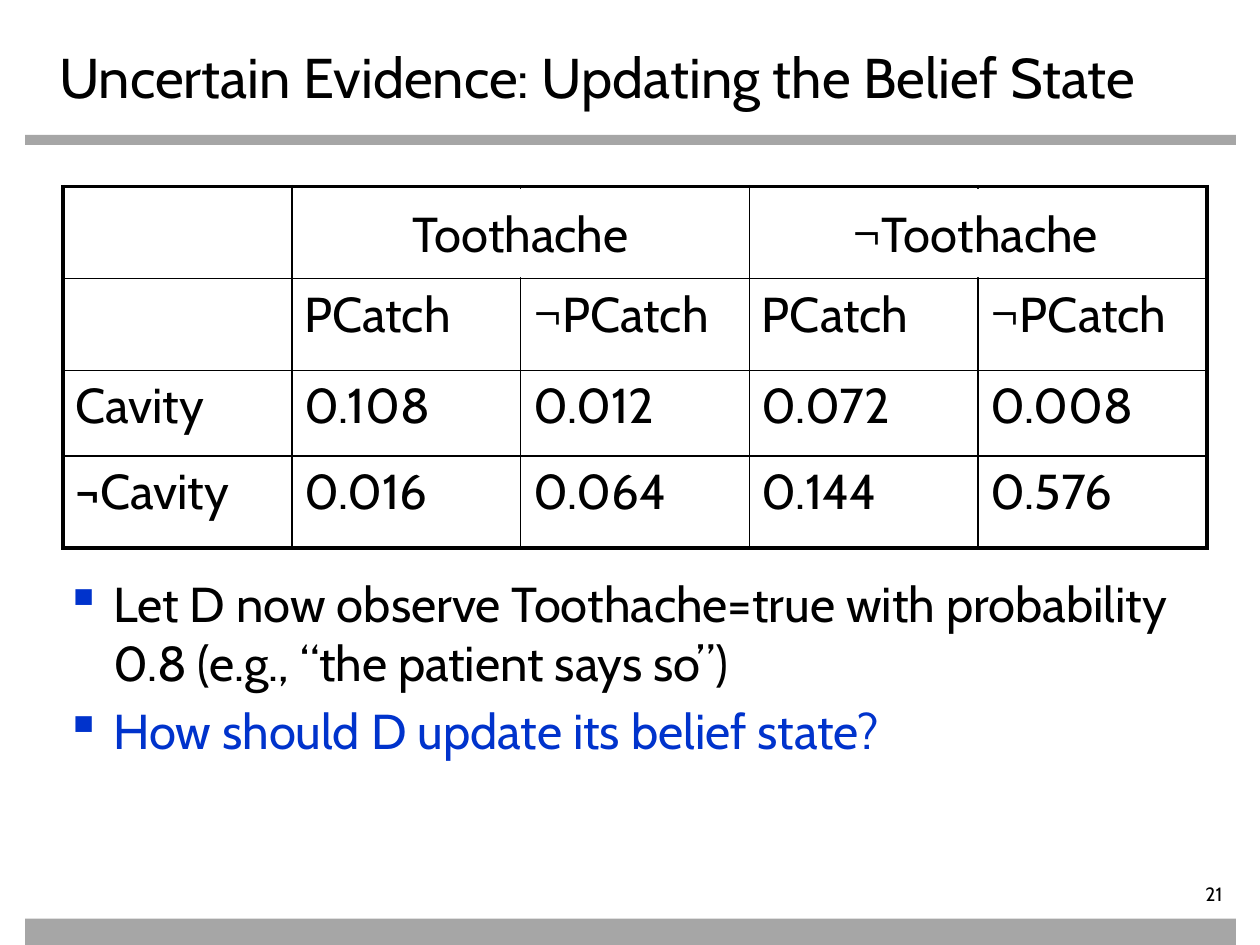
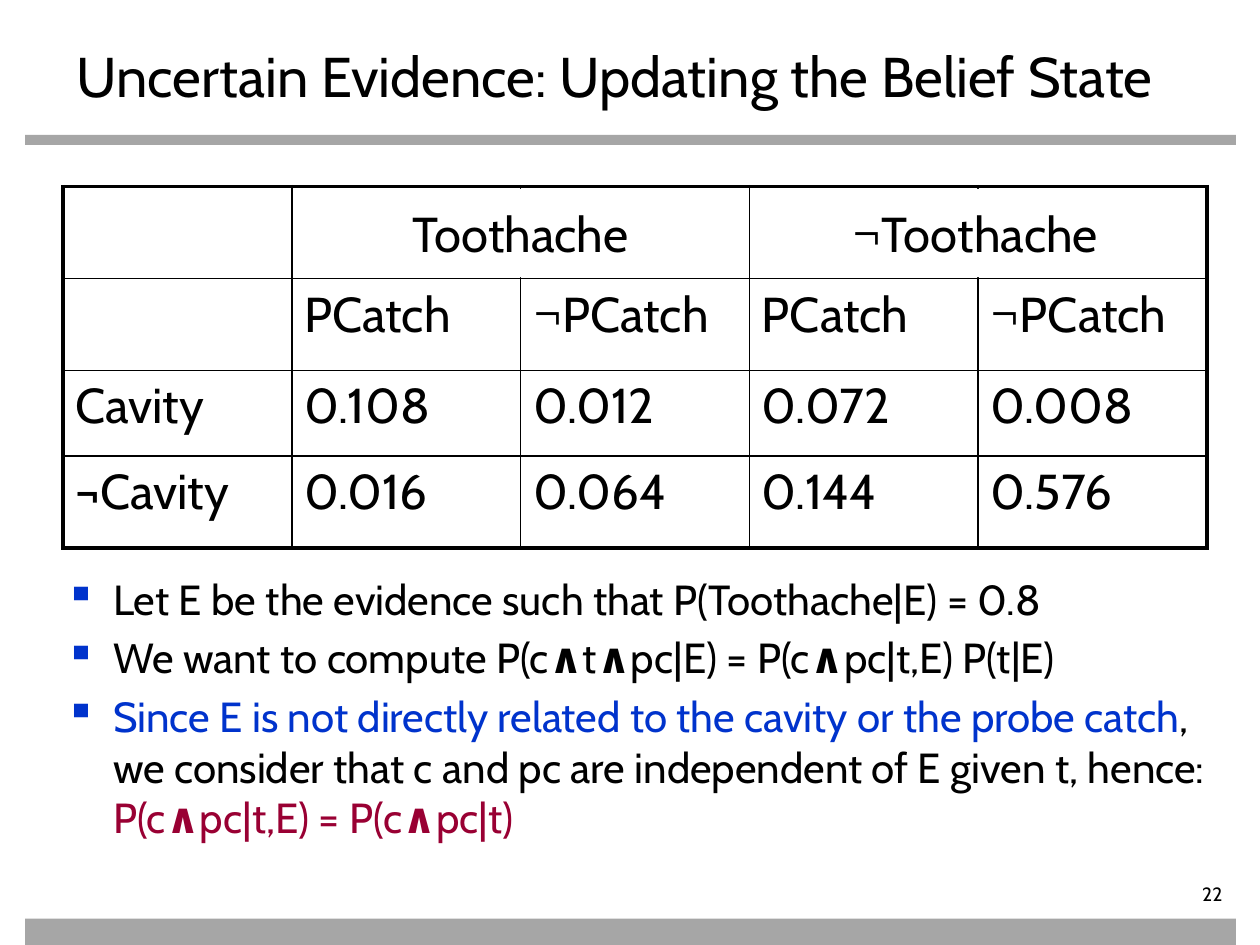
from itertools import groupby
from typing import NamedTuple

from lxml.etree import SubElement
from pptx import Presentation
from pptx.dml.color import RGBColor
from pptx.enum.shapes import MSO_SHAPE as Preset
from pptx.enum.text import MSO_ANCHOR as Anchor, MSO_AUTO_SIZE as AutoSize, PP_ALIGN as Align
from pptx.oxml.ns import qn
from pptx.util import Inches, Pt

# Shared style
FONT = "Cabin"
COLORS = {"ink": "000000", "paper": "FFFFFF", "band": "A6A6A6",
          "accent": "0033CC", "formula": "990033"}
TITLE = "Uncertain Evidence: Updating the Belief State"
TITLE_SIZE, TABLE_SIZE, NUMBER_SIZE, SMALL_NOT_SIZE = 32, 28, 11, 24
OUTER_LINE, INNER_LINE = 2.25, 1
BULLET_INDENT = Inches(0.38)


class Area(NamedTuple):
    left: float
    top: float
    width: float
    height: float

    def lengths(self) -> list:
        return [Inches(value) for value in self]


class Span(NamedTuple):
    text: str
    color: str = "ink"
    bold: bool = False
    size: float | None = None


class Header(NamedTuple):
    text: str
    area: Area


class BeliefPage(NamedTuple):
    number: int
    title_area: Area
    text_area: Area
    text_size: float
    bullets: list


def with_wedges(text: str, color: str = "ink") -> list[Span]:
    """Split a formula so that every ∧ is bold."""
    return [Span("".join(chars), color, is_wedge)
            for is_wedge, chars in groupby(text, lambda char: char == "∧")]


# Content
BANDS = [Area(0.2, 1.07, 9.61, 0.08), Area(0.2, 7.29, 9.61, 0.21)]
NUMBER_AREA = Area(8.7, 7, 1.1, 0.22)
TABLE_AREA = Area(0.5, 1.48, 9.08, 2.87)
ROW_HEIGHTS = [0.73, 0.73, 0.68, 0.73]
HEADERS = [Header("Toothache", Area(2.42, 1.5, 3.42, 0.7)),
           Header("¬Toothache", Area(6.02, 1.5, 3.44, 0.7))]
PROBABILITIES = [
    ["", "", "", "", ""],
    ["", "PCatch", "¬PCatch", "PCatch", "¬PCatch"],
    ["Cavity", "0.108", "0.012", "0.072", "0.008"],
    [[Span("¬", bold=True, size=SMALL_NOT_SIZE), Span("Cavity")],
     "0.016", "0.064", "0.144", "0.576"],
]
PAGES = [
    BeliefPage(21, Area(0.37, 0.29, 9.44, 0.54), Area(0.42, 4.5, 9.25, 1.75), 28, [
        [Span("Let D now observe Toothache=true with probability 0.8 "
              "(e.g., “the patient says so”)")],
        [Span("How should D update its belief state?", "accent")],
    ]),
    BeliefPage(22, Area(0.51, 0.28, 9, 0.55), Area(0.42, 4.5, 9.25, 2.67), 24, [
        [Span("Let E be the evidence such that P(Toothache|E) = 0.8")],
        with_wedges("We want to compute P(c∧t∧pc|E) = P(c∧pc|t,E) P(t|E)"),
        [Span("Since E is not directly related to the cavity or the probe catch", "accent"),
         Span(", we consider that c and pc are independent of E given t, hence: "),
         *with_wedges("P(c∧pc|t,E) = P(c∧pc|t)", "formula")],
    ]),
]


def rgb(color: str) -> RGBColor:
    return RGBColor.from_string(COLORS[color])


def write(para, content: str | list[Span], size: float, align=Align.LEFT) -> None:
    spans = [Span(content)] if isinstance(content, str) else content
    para.alignment = align
    para.font.name = FONT
    para.font.size = Pt(size)
    same_color = len({span.color for span in spans}) == 1
    if same_color:
        para.font.color.rgb = rgb(spans[0].color)
    mixed_bold = any(span.bold for span in spans)
    for span in spans:
        run = para.add_run()
        run.text = span.text
        if not same_color:
            run.font.color.rgb = rgb(span.color)
        if mixed_bold:
            run.font.bold = span.bold
        if span.size:
            run.font.size = Pt(span.size)


def add_block(page, area: Area, color: str):
    block = page.shapes.add_shape(Preset.RECTANGLE, *area.lengths())
    block.shadow.inherit = False
    block.fill.solid()
    block.fill.fore_color.rgb = rgb(color)
    block.line.fill.background()
    return block


def add_title(page, area: Area) -> None:
    title = page.shapes.title
    title.left, title.top, title.width, title.height = area.lengths()
    frame = title.text_frame
    frame.auto_size = AutoSize.NONE
    frame.vertical_anchor = Anchor.TOP
    write(frame.paragraphs[0], TITLE, TITLE_SIZE)


def add_number(page, number: int) -> None:
    frame = page.shapes.add_textbox(*NUMBER_AREA.lengths()).text_frame
    frame.word_wrap = True
    frame.margin_left = frame.margin_top = frame.margin_bottom = 0
    write(frame.paragraphs[0], str(number), NUMBER_SIZE, Align.RIGHT)


def set_borders(cell, widths: dict[str, float]) -> None:
    properties = cell._tc.get_or_add_tcPr()
    for side, width in widths.items():
        line = SubElement(properties, qn(f"a:ln{side}"), w=str(Pt(width)))
        fill = SubElement(line, qn("a:solidFill"))
        SubElement(fill, qn("a:srgbClr"), val=COLORS["ink"])


def add_probability_table(page) -> None:
    rows, columns = len(PROBABILITIES), len(PROBABILITIES[0])
    table = page.shapes.add_table(rows, columns, *TABLE_AREA.lengths()).table
    table.first_row = table.horz_banding = False
    for row, height in zip(table.rows, ROW_HEIGHTS):
        row.height = Inches(height)
    for r, contents in enumerate(PROBABILITIES):
        for c, content in enumerate(contents):
            cell = table.cell(r, c)
            at_edge = {"L": c == 0, "R": c == columns - 1,
                       "T": r == 0, "B": r == rows - 1}
            set_borders(cell, {side: OUTER_LINE if outer else INNER_LINE
                               for side, outer in at_edge.items()})
            cell.fill.background()
            if content:
                write(cell.text_frame.paragraphs[0], content, TABLE_SIZE)
    # Headers spanning two columns each
    for header in HEADERS:
        frame = add_block(page, header.area, "paper").text_frame
        frame.word_wrap = False
        frame.vertical_anchor = Anchor.MIDDLE
        write(frame.paragraphs[0], header.text, TABLE_SIZE, Align.CENTER)


def add_bullet(para) -> None:
    properties = para._p.get_or_add_pPr()
    properties.set("marL", str(BULLET_INDENT))
    properties.set("indent", str(-BULLET_INDENT))
    color = SubElement(properties, qn("a:buClr"))
    SubElement(color, qn("a:srgbClr"), val=COLORS["accent"])
    SubElement(properties, qn("a:buChar"), char="▪")


def add_bullets(page, area: Area, size: float, bullets: list) -> None:
    frame = page.shapes.add_textbox(*area.lengths()).text_frame
    frame.word_wrap = True
    for index, spans in enumerate(bullets):
        para = frame.add_paragraph() if index else frame.paragraphs[0]
        add_bullet(para)
        if index:
            para.space_before = Pt(0.2 * size)
        write(para, spans, size)


def main() -> None:
    deck = Presentation()
    deck.slide_width, deck.slide_height = Inches(10), Inches(7.5)
    title_only = deck.slide_layouts[5]
    for content in PAGES:
        page = deck.slides.add_slide(title_only)
        for band in BANDS:
            add_block(page, band, "band")
        add_number(page, content.number)
        add_title(page, content.title_area)
        add_probability_table(page)
        add_bullets(page, content.text_area, content.text_size, content.bullets)
    deck.save("out.pptx")


if __name__ == "__main__":
    main()
